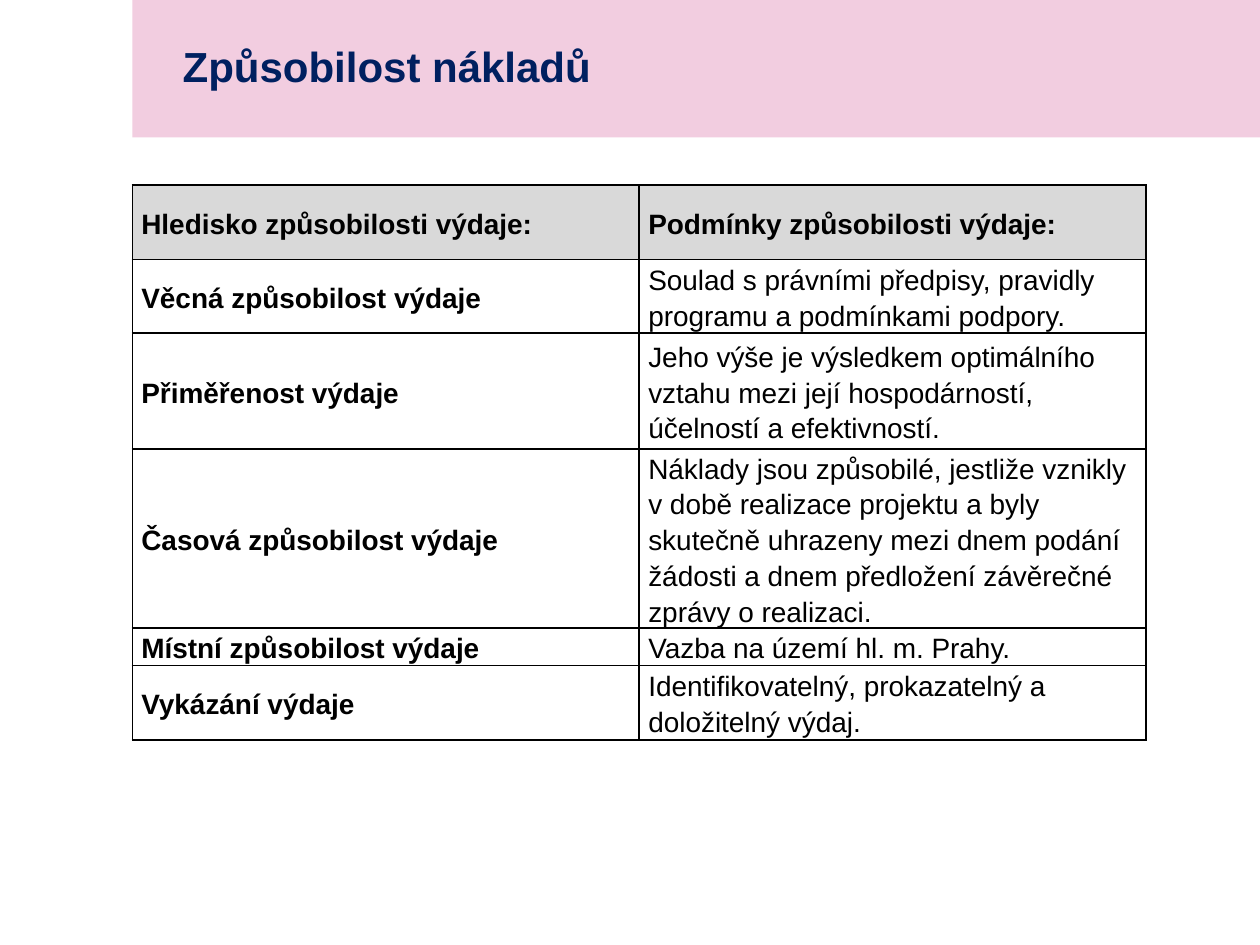
"""Build the slide on cost eligibility with a title band and a table of criteria."""
from typing import Any, NamedTuple

import pptx
import pptx.dml.color
import pptx.enum.shapes
import pptx.enum.text
import pptx.oxml
import pptx.oxml.ns
import pptx.util

Pt = pptx.util.Pt
MIDDLE = pptx.enum.text.MSO_ANCHOR.MIDDLE
TABLE_LEFT, TABLE_TOP, COLUMN_WIDTH = 75.6, 105.8, 289.7
BAND_HEIGHT = 78.5


class Row(NamedTuple):
    criterion: str
    condition: str
    height: float
    fill: str = "FFFFFF"
    is_header: bool = False


ROWS = [
    Row("Hledisko způsobilosti výdaje:", "Podmínky způsobilosti výdaje:", 42.5, "D9D9D9", True),
    Row("Věcná způsobilost výdaje",
        "Soulad s právními předpisy, pravidly programu a podmínkami podpory.", 42),
    Row("Přiměřenost výdaje",
        "Jeho výše je výsledkem optimálního vztahu mezi její hospodárností, "
        "účelností a efektivností.", 66.4),
    Row("Časová způsobilost výdaje",
        "Náklady jsou způsobilé, jestliže vznikly v době realizace projektu a byly "
        "skutečně uhrazeny mezi dnem podání žádosti a dnem předložení závěrečné "
        "zprávy o realizaci.", 102),
    Row("Místní způsobilost výdaje", "Vazba na území hl. m. Prahy.", 21.4),
    Row("Vykázání výdaje", "Identifikovatelný, prokazatelný a doložitelný výdaj.", 42.5),
]


def color(value: str) -> pptx.dml.color.RGBColor:
    return pptx.dml.color.RGBColor.from_string(value)


def set_attributes(target: Any, values: dict[str, Any]) -> None:
    for name, value in values.items():
        setattr(target, name, value)


def fill_solid(target: Any, value: str) -> None:
    target.fill.solid()
    target.fill.fore_color.rgb = color(value)


def write_text(text_frame: Any, text: str, size: float, text_color: str,
               bold: bool, line_spacing: float) -> None:
    text_frame.word_wrap = True
    paragraph = text_frame.paragraphs[0]
    paragraph.text = text
    set_attributes(paragraph, {"line_spacing": line_spacing,
                               "alignment": pptx.enum.text.PP_ALIGN.LEFT})
    set_attributes(paragraph.font, {"name": "Arial", "size": Pt(size), "bold": bold})
    paragraph.font.color.rgb = color(text_color)


def add_borders(cell: Any, value: str, width: float) -> None:
    properties = cell._tc.get_or_add_tcPr()
    for position, side in enumerate(("lnL", "lnR", "lnT", "lnB")):
        properties.insert(position, pptx.oxml.parse_xml(
            f'<a:{side} {pptx.oxml.ns.nsdecls("a")} w="{Pt(width)}">'
            f'<a:solidFill><a:srgbClr val="{value}"/></a:solidFill></a:{side}>'))


def draw_band(slide: Any, left: float, width: float) -> None:
    band = slide.shapes.add_shape(pptx.enum.shapes.MSO_SHAPE.RECTANGLE,
                                  Pt(left), Pt(0), Pt(width), Pt(BAND_HEIGHT))
    band.shadow.inherit = False
    fill_solid(band, "F2CDE0")
    band.line.fill.background()
    slide.shapes._spTree.insert(2, band._element)


def draw_title(slide: Any, text: str) -> None:
    title = slide.shapes.title
    set_attributes(title, {"left": Pt(97.2), "top": Pt(0),
                           "width": Pt(601.2), "height": Pt(BAND_HEIGHT)})
    title.text_frame.vertical_anchor = MIDDLE
    write_text(title.text_frame, text, 24, "002060", True, 0.9)


def draw_table(slide: Any, rows: list[Row]) -> None:
    frame = slide.shapes.add_table(len(rows), 2, Pt(TABLE_LEFT), Pt(TABLE_TOP),
                                   Pt(2 * COLUMN_WIDTH), Pt(sum(row.height for row in rows)))
    table = frame.table
    for column in table.columns:
        column.width = Pt(COLUMN_WIDTH)
    for row_index, row in enumerate(rows):
        table.rows[row_index].height = Pt(row.height)
        for column_index, text in enumerate((row.criterion, row.condition)):
            cell = table.cell(row_index, column_index)
            set_attributes(cell, {"margin_left": Pt(5.2), "margin_right": Pt(5.2),
                                  "margin_top": 0, "margin_bottom": 0,
                                  "vertical_anchor": MIDDLE})
            fill_solid(cell, row.fill)
            add_borders(cell, "000000", 1)
            write_text(cell.text_frame, text, 16, "000000",
                       row.is_header or column_index == 0, 1.15)


def main() -> None:
    presentation = pptx.Presentation()
    set_attributes(presentation, {"slide_width": Pt(720), "slide_height": Pt(540)})
    slide = presentation.slides.add_slide(presentation.slide_layouts[5])
    draw_band(slide, TABLE_LEFT, 720 - TABLE_LEFT)
    draw_title(slide, "Způsobilost nákladů")
    draw_table(slide, ROWS)
    presentation.save("out.pptx")


if __name__ == "__main__":
    main()
